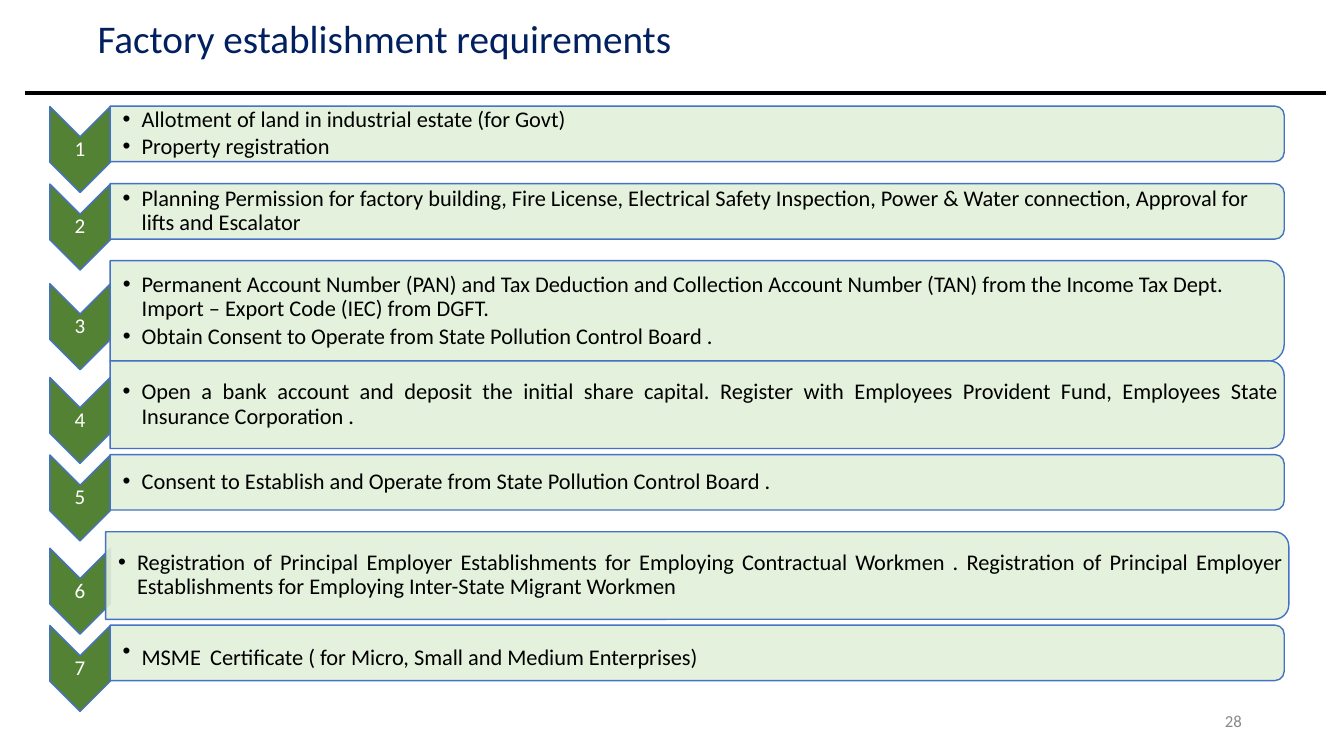
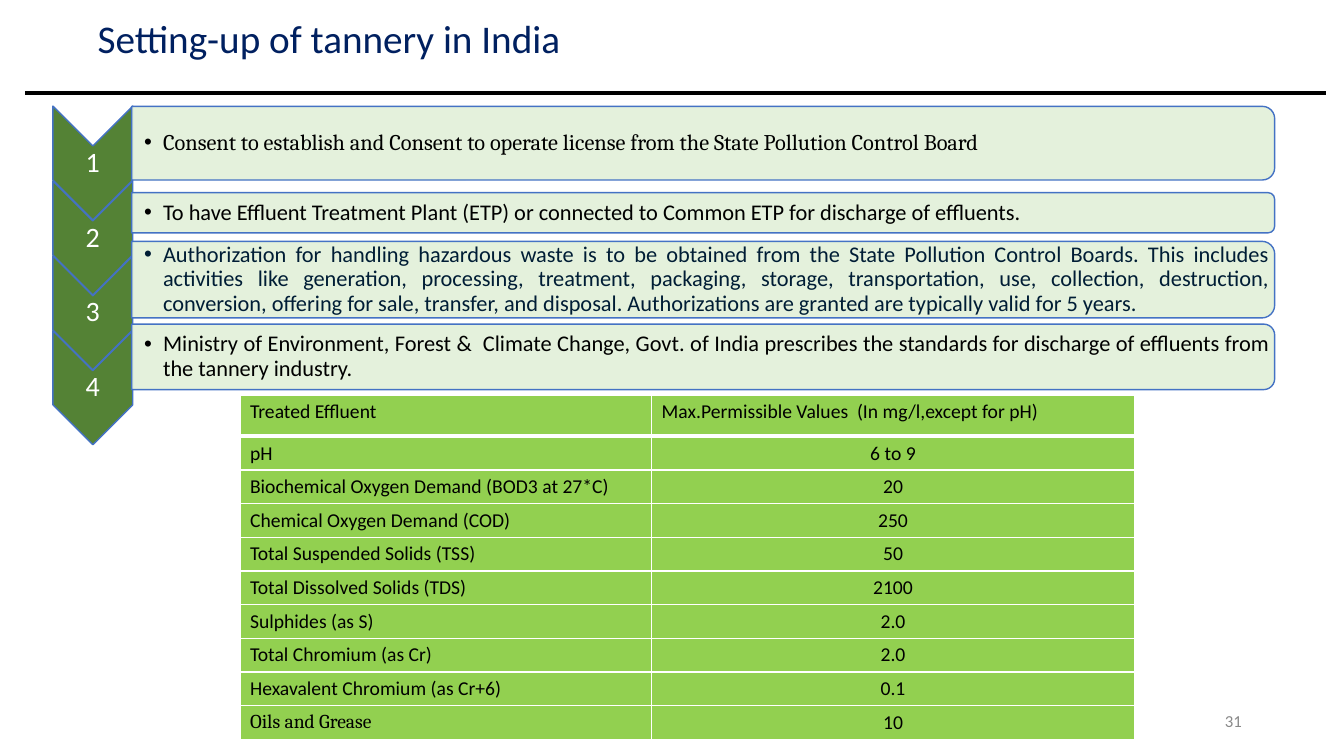
from dataclasses import dataclass

from lxml.etree import SubElement
from pptx import Presentation
from pptx.dml.color import RGBColor as Rgb
from pptx.enum.shapes import MSO_CONNECTOR as Line, MSO_SHAPE as Preset
from pptx.enum.text import MSO_ANCHOR as Anchor, PP_ALIGN as Align
from pptx.oxml.ns import qn
from pptx.util import Pt

COLOURS = {
    "title": "002060",
    "number": "898989",
    "rule": "000000",
    "text": "000000",
    "navy": "001D35",
    "chevron": "548235",
    "bar": "E2F0D9",
    "outline": "4472C4",
    "label": "FFFFFF",
    "cell": "92D050",
    "border": "FFFFFF",
}
BODY_FONT = "Calibri"
SERIF_FONT = "Cambria"
BAR_INSETS = {"margin_left": Pt(9), "margin_top": Pt(0.7), "margin_right": Pt(0.7), "margin_bottom": Pt(0.7)}
LABEL_INSETS = {**BAR_INSETS, "margin_left": Pt(0.7)}
CELL_INSETS = {"margin_left": Pt(7.2), "margin_top": Pt(3.6), "margin_right": Pt(7.2), "margin_bottom": Pt(3.6)}
BULLET_INDENT = Pt(13.5)
CORNER_INSET = 0.05


@dataclass
class Step:
    top: float
    height: float
    paragraphs: list
    align: Align = Align.LEFT
    font: str = BODY_FONT
    colour: str = "text"
    overhang: float = 0


@dataclass
class Ladder:
    chevron_left: float
    chevron_width: float
    chevron_height: float
    label_size: float
    bar_left: float
    bar_width: float


FACTORY_LADDER = Ladder(35.6, 43.2, 61.4, 15, 78.7, 838.6)
TANNERY_LADDER = Ladder(37.8, 57, 81.4, 20, 94, 816.5)

FACTORY_STEPS = [
    Step(75.8, 39.6, ["Allotment of land in industrial estate (for Govt)", "Property registration"]),
    Step(131.2, 39.6, [
        "Planning Permission for factory building, Fire License, Electrical Safety Inspection, "
        "Power & Water connection, Approval for lifts and Escalator"]),
    Step(186.2, 72, [
        "Permanent Account Number (PAN) and Tax Deduction and Collection Account Number (TAN) "
        "from the Income Tax Dept. Import – Export Code (IEC) from DGFT.",
        "Obtain Consent to Operate from State Pollution Control Board ."]),
    Step(257.8, 62.6, [
        "Open a bank account and deposit the initial share capital. Register with Employees "
        "Provident Fund, Employees State Insurance Corporation ."], Align.JUSTIFY),
    Step(324.7, 39.6, ["Consent to Establish and Operate from State Pollution Control Board ."]),
    Step(379.8, 62.6, [
        "Registration of Principal Employer Establishments for Employing Contractual Workmen . "
        "Registration of Principal Employer Establishments for Employing Inter-State Migrant Workmen"],
        Align.JUSTIFY, overhang=3.3),
    Step(446.5, 39.6, [
        [("MSME", 16), (" ", 29), ("Certificate ( for Micro, Small and Medium Enterprises)", 16)]],
        Align.JUSTIFY),
]

TANNERY_STEPS = [
    Step(76, 52.6, [
        "Consent to establish and Consent to operate license from the State Pollution Control Board"],
        font=SERIF_FONT),
    Step(137.6, 28.8, [
        "To have Effluent Treatment Plant (ETP) or connected to Common ETP for discharge of effluents."]),
    Step(172.4, 54.7, [
        "Authorization for handling hazardous waste is to be obtained from the State Pollution Control "
        "Boards. This includes activities like generation, processing, treatment, packaging, storage, "
        "transportation, use, collection, destruction, conversion, offering for sale, transfer, and "
        "disposal. Authorizations are granted are typically valid for 5 years."],
        Align.JUSTIFY, colour="navy"),
    Step(231.5, 46.8, [
        "Ministry of Environment, Forest &  Climate Change, Govt. of India prescribes the standards "
        "for discharge of effluents from the tannery industry."], Align.JUSTIFY),
]

EFFLUENT_ROWS = [
    ("Treated Effluent", "Max.Permissible Values  (In mg/l,except for pH)"),
    ("pH", "6 to 9"),
    ("Biochemical Oxygen Demand (BOD3 at 27*C)", "20"),
    ("Chemical Oxygen Demand (COD)", "250"),
    ("Total Suspended Solids (TSS)", "50"),
    ("Total Dissolved Solids (TDS)", "2100"),
    ("Sulphides (as S)", "2.0"),
    ("Total Chromium (as Cr)", "2.0"),
    ("Hexavalent Chromium (as Cr+6)", "0.1"),
    ("Oils and Grease", "10"),
]


def apply_format(target, values):
    for name, value in values.items():
        setattr(target, name, value)


def colour_of(name):
    return Rgb.from_string(COLOURS[name])


def add_span(para, text, size, colour, font=BODY_FONT):
    span = para.add_run()
    span.text = text
    apply_format(span.font, {"size": Pt(size), "name": font, "bold": False})
    span.font.color.rgb = colour_of(colour)


def add_text_box(page, left, top, width, height, insets=None):
    box = page.shapes.add_textbox(Pt(left), Pt(top), Pt(width), Pt(height))
    frame = box.text_frame
    apply_format(frame, {"word_wrap": True, "vertical_anchor": Anchor.MIDDLE, **(insets or {})})
    return frame


def add_bullet(para):
    properties = para._p.get_or_add_pPr()
    properties.set("marL", str(BULLET_INDENT))
    properties.set("indent", str(-BULLET_INDENT))
    SubElement(properties, qn("a:buFont")).set("typeface", "Arial")
    SubElement(properties, qn("a:buChar")).set("char", "•")


def add_upright_shape(page, preset, left, top, width, height, fill):
    shape = page.shapes.add_shape(
        preset, Pt(left + (width - height) / 2), Pt(top + (height - width) / 2), Pt(height), Pt(width))
    shape.rotation = 90
    shape.shadow.inherit = False
    shape.fill.solid()
    shape.fill.fore_color.rgb = colour_of(fill)
    shape.line.color.rgb = colour_of("outline")
    shape.line.width = Pt(1)
    return shape


def add_chevron(page, ladder, middle, number):
    add_upright_shape(page, Preset.CHEVRON, ladder.chevron_left, middle - ladder.chevron_height / 2,
                      ladder.chevron_width, ladder.chevron_height, "chevron")
    label_height = ladder.label_size * 1.25
    frame = add_text_box(page, ladder.chevron_left, middle - label_height / 2,
                         ladder.chevron_width, label_height, LABEL_INSETS)
    para = frame.paragraphs[0]
    apply_format(para, {"alignment": Align.CENTER, "line_spacing": 0.9,
                        "space_after": Pt(ladder.label_size * 0.35)})
    add_span(para, str(number), ladder.label_size, "label")


def add_bar(page, ladder, step):
    left = ladder.bar_left - step.overhang
    width = ladder.bar_width + 2 * step.overhang
    bar = add_upright_shape(page, Preset.ROUND_2_SAME_RECTANGLE, left, step.top, width, step.height, "bar")
    tint = bar.fill._xPr.find(qn("a:solidFill"))[0]
    SubElement(tint, qn("a:alpha")).set("val", "90000")
    inset = step.height * CORNER_INSET
    frame = add_text_box(page, left, step.top + inset, width - inset, step.height - 2 * inset, BAR_INSETS)
    for index, content in enumerate(step.paragraphs):
        para = frame.add_paragraph() if index else frame.paragraphs[0]
        add_bullet(para)
        apply_format(para, {"level": 1, "alignment": step.align, "line_spacing": 0.9, "space_after": Pt(2.4)})
        spans = [(content, 16)] if isinstance(content, str) else content
        for text, size in spans:
            add_span(para, text, size, step.colour, step.font)


def add_steps(page, ladder, steps, middles):
    for number, (step, middle) in enumerate(zip(steps, middles), 1):
        add_chevron(page, ladder, middle, number)
        add_bar(page, ladder, step)


def add_cell_border(cell, side, width):
    border = SubElement(cell._tc.get_or_add_tcPr(), qn(f"a:{side}"), w=str(Pt(width)))
    fill = SubElement(border, qn("a:solidFill"))
    SubElement(fill, qn("a:srgbClr")).set("val", COLOURS["border"])


def fill_cell(cell, text, is_header, align, font):
    for side in ("lnL", "lnR", "lnT", "lnB"):
        add_cell_border(cell, side, 3 if is_header and side == "lnB" else 1)
    cell.fill.solid()
    cell.fill.fore_color.rgb = colour_of("cell")
    apply_format(cell, CELL_INSETS)
    para = cell.text_frame.paragraphs[0]
    para.alignment = align
    add_span(para, text, 14, "text", font)


def add_effluent_table(page, rows):
    widths = (294, 345)
    heights = [29.5] + [24] * (len(rows) - 1)
    table = page.shapes.add_table(len(rows), len(widths), Pt(171.4), Pt(282.2),
                                  Pt(sum(widths)), Pt(sum(heights))).table
    apply_format(table, {"first_row": False, "horz_banding": False})
    for column, width in zip(table.columns, widths):
        column.width = Pt(width)
    for row_index, (row, height) in enumerate(zip(rows, heights)):
        table.rows[row_index].height = Pt(height)
        for column_index, text in enumerate(row):
            align = Align.CENTER if row_index and column_index else Align.LEFT
            font = SERIF_FONT if text == "Oils and Grease" else BODY_FONT
            fill_cell(table.cell(row_index, column_index), text, row_index == 0, align, font)


def add_page(deck, title, number):
    page = deck.slides.add_slide(deck.slide_layouts[6])
    para = add_text_box(page, 678.2, 500.4, 216, 28.8).paragraphs[0]
    para.alignment = Align.RIGHT
    add_span(para, str(number), 12, "number")
    para = add_text_box(page, 62.6, 0, 681, 57.6).paragraphs[0]
    para.line_spacing = 0.9
    add_span(para, title, 28, "title")
    rule = page.shapes.add_connector(Line.STRAIGHT, Pt(18), Pt(66.5), Pt(947.5), Pt(66.5))
    rule.line.color.rgb = colour_of("rule")
    rule.line.width = Pt(2.25)
    SubElement(rule._element.spPr, qn("a:effectLst"))
    return page


def main():
    deck = Presentation()
    apply_format(deck, {"slide_width": Pt(960), "slide_height": Pt(540)})

    page = add_page(deck, "Factory establishment requirements", 28)
    middles = [step.top + step.height / 2 + 11.2 for step in FACTORY_STEPS]
    add_steps(page, FACTORY_LADDER, FACTORY_STEPS, middles)

    page = add_page(deck, "Setting-up of tannery in India", 31)
    middles = [116.5 + 53.5 * index for index in range(len(TANNERY_STEPS))]
    add_steps(page, TANNERY_LADDER, TANNERY_STEPS, middles)
    add_effluent_table(page, EFFLUENT_ROWS)

    deck.save("out.pptx")


if __name__ == "__main__":
    main()
